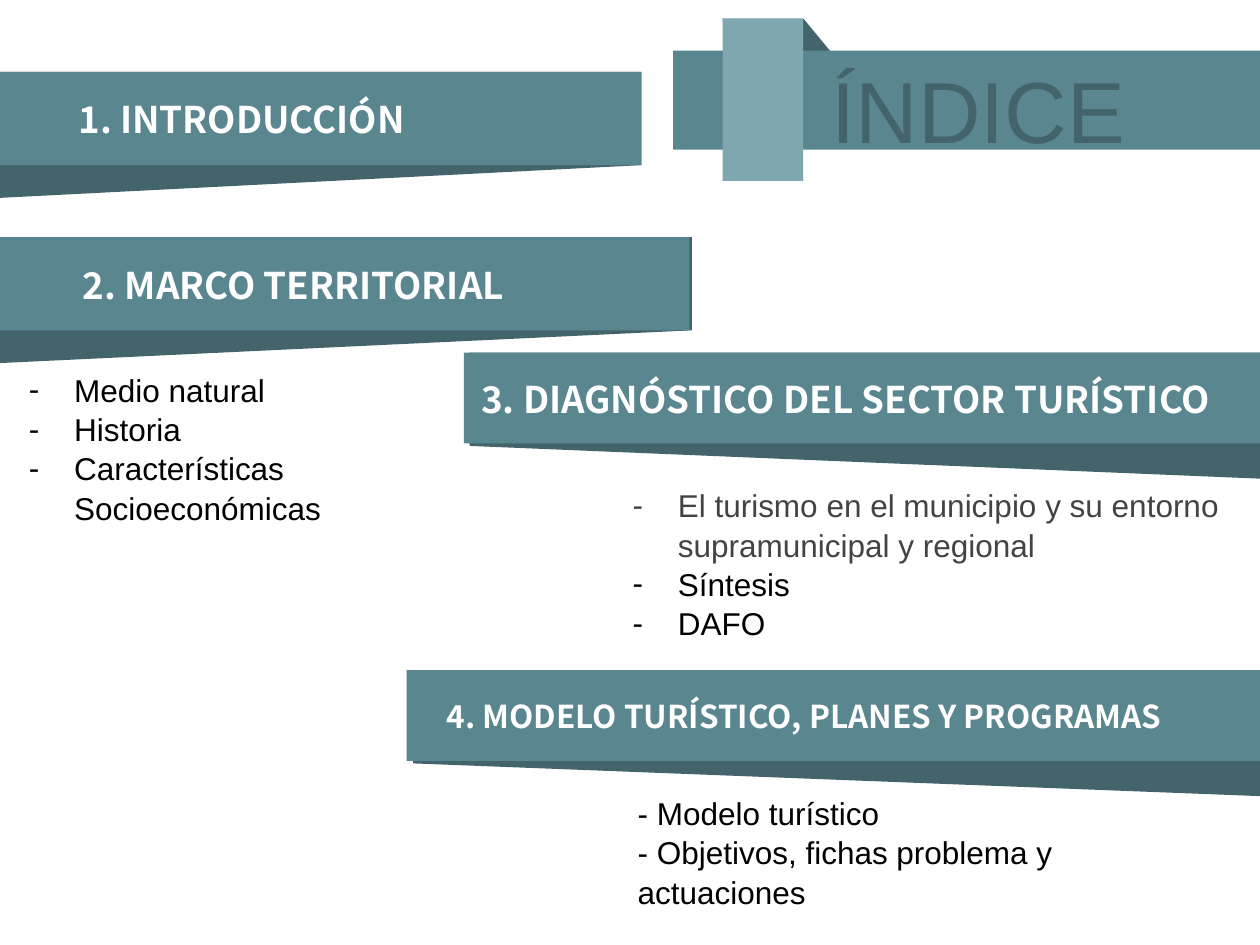
from dataclasses import dataclass

from lxml import etree
from pptx import Presentation
from pptx.dml.color import RGBColor
from pptx.enum.shapes import MSO_SHAPE
from pptx.enum.text import MSO_ANCHOR, MSO_AUTO_SIZE, PP_ALIGN
from pptx.oxml.ns import qn
from pptx.util import Cm, Pt

RECTANGLE = MSO_SHAPE.RECTANGLE
TOP = MSO_ANCHOR.TOP
FIT_SHAPE = MSO_AUTO_SIZE.SHAPE_TO_FIT_TEXT
NO_FIT = MSO_AUTO_SIZE.NONE
LEFT = PP_ALIGN.LEFT
RIGHT = PP_ALIGN.RIGHT
JUSTIFY = PP_ALIGN.JUSTIFY

TEAL = "5A868F"
DARK_TEAL = "43646B"
LIGHT_TEAL = "7FA7AF"
WHITE = "FFFFFF"
BLACK = "000000"
GRAY = "434343"
BODY_FONT = "Arial"
HEADING_FONT = "Noto Sans CJK SC"
COMPARISON_LAYOUT = 4
UNUSED_PLACEHOLDER = 3
LINE_SPACING = 1.04


@dataclass
class Box:
    left: float
    top: float
    width: float
    height: float

    def lengths(self) -> tuple:
        return Cm(self.left), Cm(self.top), Cm(self.width), Cm(self.height)


@dataclass
class Banner:
    text: str
    bar: Box
    label: Box
    shade_inner: float
    shade_outer: float
    size: float
    alignment: PP_ALIGN


@dataclass
class TopicList:
    placeholder: int
    box: Box
    items: list[str]
    colors: list[str]
    dashed: bool


BANNERS = [
    Banner("3. DIAGNÓSTICO DEL SECTOR TURÍSTICO", Box(9.35, 7.11, 16.08, 1.83),
           Box(9.45, 7.47, 15.9, 1.14), 9.47, 25.4, 21, LEFT),
    Banner("1. INTRODUCCIÓN", Box(0, 1.45, 12.93, 1.88),
           Box(0.94, 1.83, 7.47, 1.14), 12.93, 0, 21, RIGHT),
    Banner("2. MARCO TERRITORIAL", Box(0, 4.78, 13.9, 1.88),
           Box(0.94, 5.18, 9.47, 1.14), 13.95, 0, 21, RIGHT),
    Banner("4. MODELO TURÍSTICO, PLANES Y PROGRAMAS", Box(8.2, 13.51, 17.22, 1.83),
           Box(8.76, 13.92, 15.77, 1.02), 8.33, 25.4, 18, LEFT),
]

TOPIC_LISTS = [
    TopicList(1, Box(-0.03, 7.32, 9.35, 4.32),
              ["Medio natural", "Historia", "Características Socioeconómicas"],
              [BLACK, BLACK, BLACK], True),
    TopicList(2, Box(12.14, 9.65, 13.16, 3.61),
              ["El turismo en el municipio y su entorno supramunicipal y regional",
               "Síntesis", "DAFO"],
              [GRAY, BLACK, BLACK], True),
    TopicList(4, Box(12.6, 15.85, 9.12, 2.67),
              ["- Modelo turístico", "- Objetivos, fichas problema y actuaciones"],
              [BLACK, BLACK], False),
]


def rgb(color: str) -> RGBColor:
    return RGBColor.from_string(color)


def paint(shape, color: str) -> None:
    shape.shadow.inherit = False
    shape.fill.solid()
    shape.fill.fore_color.rgb = rgb(color)
    shape.line.fill.background()


def add_bar(slide, box: Box, color: str) -> None:
    paint(slide.shapes.add_shape(RECTANGLE, *box.lengths()), color)


def add_polygon(slide, points: list[tuple[float, float]], color: str) -> None:
    corners = [(Cm(x), Cm(y)) for x, y in points]
    builder = slide.shapes.build_freeform(*corners[0])
    builder.add_line_segments(corners[1:], close=True)
    paint(builder.convert_to_shape(), color)


def format_paragraph(paragraph, font: str, size: float, color: str,
                     bold: bool, alignment: PP_ALIGN) -> None:
    paragraph.alignment = alignment
    for run in paragraph.runs:
        run.font.name = font
        run.font.size = Pt(size)
        run.font.bold = bold
        run.font.color.rgb = rgb(color)


def add_banner(slide, banner: Banner) -> None:
    top = banner.bar.top
    add_polygon(slide, [(banner.shade_outer, top), (banner.shade_inner, top),
                        (banner.shade_inner, top + 1.88),
                        (banner.shade_outer, top + 2.54)], DARK_TEAL)
    add_bar(slide, banner.bar, TEAL)
    text_frame = slide.shapes.add_textbox(*banner.label.lengths()).text_frame
    text_frame.word_wrap = False
    text_frame.auto_size = FIT_SHAPE
    text_frame.text = banner.text
    format_paragraph(text_frame.paragraphs[0], HEADING_FONT, banner.size,
                     WHITE, True, banner.alignment)


def set_bullet(paragraph, dashed: bool) -> None:
    properties = paragraph._p.get_or_add_pPr()
    properties.set("marL", str(Cm(1.27) if dashed else 0))
    properties.set("indent", str(Cm(-0.91) if dashed else 0))
    if dashed:
        etree.SubElement(properties, qn("a:buFont")).set("typeface", BODY_FONT)
        etree.SubElement(properties, qn("a:buChar")).set("char", "-")
    else:
        etree.SubElement(properties, qn("a:buNone"))


def place_placeholder(slide, shape, box: Box, text: str):
    shape.left, shape.top, shape.width, shape.height = box.lengths()
    slide.shapes._spTree.append(shape._element)
    text_frame = shape.text_frame
    text_frame.word_wrap = True
    text_frame.vertical_anchor = TOP
    text_frame.auto_size = NO_FIT
    text_frame.text = text
    return text_frame


def fill_list(slide, topics: TopicList) -> None:
    shape = slide.placeholders[topics.placeholder]
    text_frame = place_placeholder(slide, shape, topics.box, "\n".join(topics.items))
    for paragraph, color in zip(text_frame.paragraphs, topics.colors):
        set_bullet(paragraph, topics.dashed)
        paragraph.space_before = Pt(0)
        paragraph.line_spacing = LINE_SPACING
        format_paragraph(paragraph, BODY_FONT, 18, color, False, LEFT)


def add_title(slide) -> None:
    add_polygon(slide, [(14.55, 0.38), (16.2, 0.38), (17.78, 2.29)], DARK_TEAL)
    add_bar(slide, Box(13.57, 1.02, 11.83, 2), TEAL)
    add_bar(slide, Box(14.57, 0.37, 1.62, 3.28), LIGHT_TEAL)
    text_frame = place_placeholder(slide, slide.shapes.title,
                                   Box(16.51, 0.94, 7.7, 2.36), "ÍNDICE")
    paragraph = text_frame.paragraphs[0]
    paragraph.line_spacing = LINE_SPACING
    format_paragraph(paragraph, BODY_FONT, 49.5, DARK_TEAL, False, JUSTIFY)


def main() -> None:
    presentation = Presentation()
    presentation.slide_width = Cm(25.4)
    presentation.slide_height = Cm(19.05)
    slide = presentation.slides.add_slide(presentation.slide_layouts[COMPARISON_LAYOUT])
    unused = slide.placeholders[UNUSED_PLACEHOLDER]._element
    unused.getparent().remove(unused)
    add_title(slide)
    for banner in BANNERS:
        add_banner(slide, banner)
    for topics in TOPIC_LISTS:
        fill_list(slide, topics)
    presentation.save("out.pptx")


if __name__ == "__main__":
    main()
